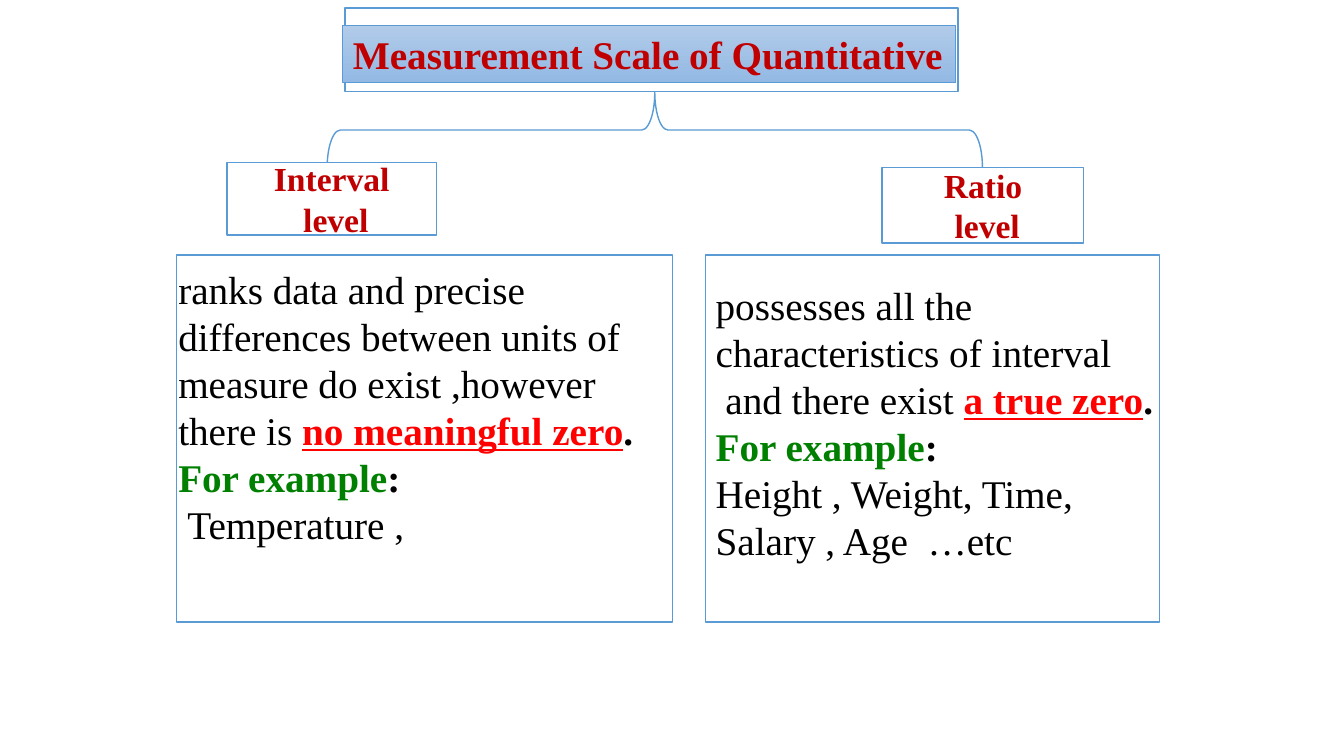
"""Build the slide on interval and ratio measurement scales."""
from pptx import Presentation
from pptx.dml.color import RGBColor
from pptx.enum import shapes, text
from pptx.util import Inches, Pt

BLUE, WHITE, BLACK = "5B9BD5", "FFFFFF", "000000"
DARK, RED, GREEN = "C00000", "FF0000", "008000"
FONT = "Times New Roman"
RECT = shapes.MSO_SHAPE.RECTANGLE
BRACE = shapes.MSO_SHAPE.RIGHT_BRACE

TITLE = "Measurement Scale of Quantitative"
TITLE_BOX = (3.4, 0.25, 6.08, 0.57)
FRAME = (3.42, 0.08, 6.08, 0.83)
FORK = (6.12, -1.96, 0.75, 6.5)
EXAMPLE = [("For example", GREEN, "b"), (":", BLACK, "b")]

LEVELS = [
    dict(
        name=["Interval", " level"],
        label=(2.25, 1.61, 2.08, 0.72),
        panel=(1.75, 2.53, 4.92, 3.64),
        body=(1.67, 2.58, 5, 3.4),
        lines=[
            [("ranks data and precise differences between units of "
              "measure do exist ,however there is ", BLACK, ""),
             ("no meaningful zero", RED, "bu"), (".", BLACK, "b")],
            EXAMPLE,
            [(" Temperature ,", BLACK, "")],
        ],
    ),
    dict(
        name=["Ratio", " level"],
        label=(8.75, 1.66, 2, 0.75),
        panel=(7, 2.53, 4.5, 3.64),
        body=(7, 2.74, 5, 2.93),
        lines=[
            [("possesses all the characteristics of interval", BLACK, "")],
            [(" and there exist ", BLACK, ""),
             ("a true zero", RED, "bu"), (".", BLACK, "b")],
            EXAMPLE,
            [("Height , Weight, Time,", BLACK, "")],
            [("Salary , Age  …etc", BLACK, "")],
        ],
    ),
]


def color(code):
    return RGBColor.from_string(code)


def write(shape, lines, size=28, align="LEFT", anchor="TOP"):
    frame = shape.text_frame
    frame.word_wrap = True
    frame.auto_size = text.MSO_AUTO_SIZE.NONE
    frame.vertical_anchor = getattr(text.MSO_ANCHOR, anchor)
    for i, line in enumerate(lines):
        para = frame.add_paragraph() if i else frame.paragraphs[0]
        para.alignment = getattr(text.PP_ALIGN, align)
        for words, code, style in line:
            run = para.add_run()
            run.text = words
            font = run.font
            font.name, font.size = FONT, Pt(size)
            font.bold, font.underline = "b" in style, "u" in style
            font.color.rgb = color(code)


def outline(shape, width=1):
    shape.line.color.rgb = color(BLUE)
    shape.line.width = Pt(width)


def draw(slide, kind, box):
    shape = slide.shapes.add_shape(kind, *map(Inches, box))
    shape.shadow.inherit = False
    shape.fill.solid()
    shape.fill.fore_color.rgb = color(WHITE)
    outline(shape)
    return shape


def head(slide):
    title = slide.shapes.title
    title.left, title.top, title.width, title.height = map(Inches, TITLE_BOX)
    title.fill.gradient()
    title.fill.gradient_angle = 270
    for stop, code in zip(title.fill.gradient_stops, ("B1CBE9", "93B9E4")):
        stop.color.rgb = color(code)
    for stop, place in zip(title.fill.gradient_stops, (0, 1)):
        stop.position = place
    outline(title, 0.5)
    write(title, [[(TITLE, DARK, "b")]])
    slide.shapes._spTree.append(title._element)


def main():
    deck = Presentation()
    deck.slide_width, deck.slide_height = Inches(13.33), Inches(7.5)
    slide = deck.slides.add_slide(deck.slide_layouts[5])
    draw(slide, RECT, FRAME)
    fork = draw(slide, BRACE, FORK)
    fork.rotation = 270
    fork.adjustments[0] = 0.174
    for level in LEVELS:
        label = draw(slide, RECT, level["label"])
        write(label, [[(word, DARK, "b")] for word in level["name"]],
              size=24, align="CENTER", anchor="MIDDLE")
        draw(slide, RECT, level["panel"])
        body = slide.shapes.add_textbox(*map(Inches, level["body"]))
        write(body, level["lines"])
    head(slide)
    deck.save("out.pptx")


if __name__ == "__main__":
    main()
